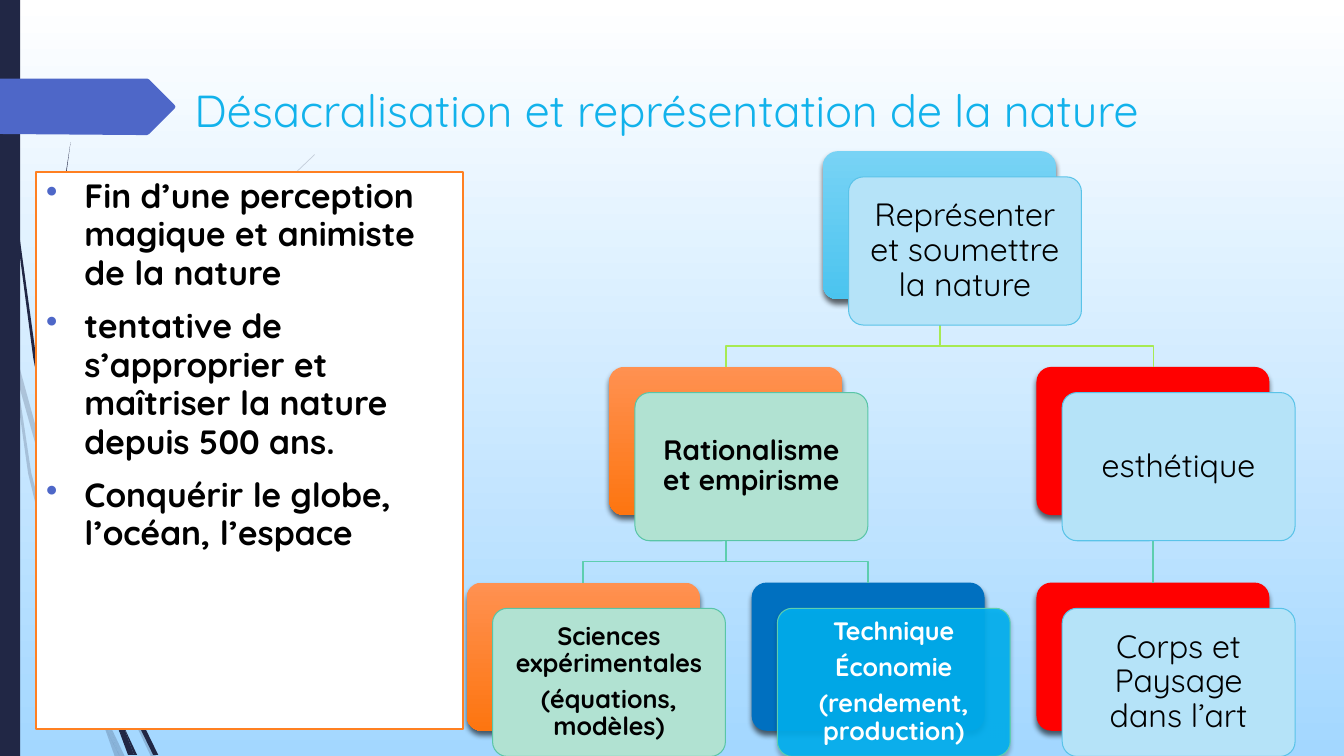
from lxml import etree
from pptx import Presentation
from pptx.dml.color import RGBColor
from pptx.enum.shapes import MSO_CONNECTOR, MSO_SHAPE
from pptx.enum.text import MSO_ANCHOR, PP_ALIGN
from pptx.oxml.ns import qn
from pptx.util import Pt

RECTANGLE, ROUNDED = MSO_SHAPE.RECTANGLE, MSO_SHAPE.ROUNDED_RECTANGLE
STRAIGHT = MSO_CONNECTOR.STRAIGHT
TOP, MIDDLE = MSO_ANCHOR.TOP, MSO_ANCHOR.MIDDLE
LEFT, CENTER = PP_ALIGN.LEFT, PP_ALIGN.CENTER

WHITE = RGBColor(0xFF, 0xFF, 0xFF)
BLACK = RGBColor(0x00, 0x00, 0x00)
SKY = RGBColor(0xA3, 0xD7, 0xFF)
NAVY = RGBColor(0x21, 0x27, 0x45)
INDIGO = RGBColor(0x4E, 0x67, 0xC8)
TITLE_BLUE = RGBColor(0x12, 0xB2, 0xEB)
BORDER_ORANGE = RGBColor(0xFF, 0x80, 0x21)
CYAN_LIGHT = RGBColor(0x78, 0xD3, 0xF5)
CYAN = RGBColor(0x4B, 0xC4, 0xEF)
ORANGE_LIGHT = RGBColor(0xFF, 0x91, 0x51)
ORANGE = RGBColor(0xFD, 0x75, 0x10)
RED = RGBColor(0xFF, 0x00, 0x00)
BLUE = RGBColor(0x00, 0x70, 0xC0)
BRIGHT_BLUE = RGBColor(0x00, 0xB0, 0xF0)
PALE_BLUE = RGBColor(0xB5, 0xE3, 0xF8)
PALE_BLUE_EDGE = RGBColor(0x5A, 0xC3, 0xE8)
MINT = RGBColor(0xB1, 0xE2, 0xD2)
MINT_EDGE = RGBColor(0x59, 0xC5, 0xA7)
LIME = RGBColor(0xA7, 0xEA, 0x52)
TEAL = RGBColor(0x5D, 0xCE, 0xAF)

COLUMNS, ROWS, CELL = 1333, 750, 9144
CARD_WIDTH, CARD_HEIGHT = 231, 147
CARD_SHIFT = 25.5
TREE_LEFT, TREE_TOP, COLUMN_STEP, LEVEL_STEP = 463, 150, 282.5, 214

PALE_STRANDS = [
    [(11, 350), (9, 322), (0, 282), (0, 299), (10, 344)],
    [(58, 522), (84, 599), (85, 586), (62, 520), (14, 345), (17, 376)],
    [(92, 607), (88, 596), (88, 610), (123, 694), (150, 751), (155, 751), (127, 692)],
    [(119, 751), (124, 751), (105, 711)],
    [(93, 683), (70, 619), (31, 469), (17, 376), (11, 350), (28, 470), (65, 621),
     (92, 693), (101, 714), (99, 707)],
    [(88, 584), (110, 462), (160, 349), (229, 245), (268, 198), (290, 175), (312, 154),
     (312, 153), (289, 175), (268, 197), (228, 244), (158, 348), (107, 461), (85, 584),
     (85, 586), (88, 596)],
    [(101, 714), (114, 751), (119, 751)],
    [(96, 692), (93, 683), (99, 707), (101, 714), (119, 751), (105, 711)],
]
DARK_STRANDS = [
    [(7, 110), (17, 233), (33, 355), (56, 477), (57, 481), (55, 457), (55, 453),
     (36, 355), (19, 232), (8, 109), (5, 48), (4, 0), (3, 0), (4, 48)],
    [(113, 649), (110, 641), (111, 656), (132, 708), (152, 749), (157, 749), (136, 706)],
    [(110, 691), (98, 657), (72, 556), (64, 505), (57, 477), (68, 557), (93, 659),
     (111, 708), (117, 722), (116, 717)],
    [(60, 472), (58, 453), (54, 349), (58, 245), (63, 193), (70, 141), (62, 193),
     (56, 245), (52, 349), (55, 449)],
    [(133, 749), (136, 749), (122, 719)],
    [(117, 722), (127, 749), (131, 749)],
    [(116, 706), (110, 691), (116, 717), (117, 722), (130, 749), (133, 749), (122, 719)],
]
BANNER = [(173, 108), (148, 133), (146, 134), (136, 134), (0, 133), (0, 78),
          (146, 78), (148, 79), (173, 104), (174, 106)]

POINTS = [
    "Fin d’une perception magique et animiste de la nature",
    "tentative de s’approprier et maîtriser la nature depuis 500 ans.",
    "Conquérir le globe, l’océan, l’espace",
]
ORANGES = (ORANGE_LIGHT, ORANGE)
CARDS = {
    "root": (1.25, 0, (CYAN_LIGHT, CYAN), PALE_BLUE, PALE_BLUE_EDGE, 23, BLACK,
             ["Représenter et soumettre la nature"]),
    "reason": (0.5, 1, ORANGES, MINT, MINT_EDGE, 20, BLACK, ["Rationalisme et empirisme"]),
    "science": (0, 2, ORANGES, MINT, MINT_EDGE, 18, BLACK,
                ["Sciences expérimentales", "(équations, modèles)"]),
    "technique": (1, 2, (BLUE,), BRIGHT_BLUE, TEAL, 18, WHITE,
                  ["Technique", "Économie", "(rendement, production)"]),
    "aesthetics": (2, 1, (RED,), PALE_BLUE, PALE_BLUE_EDGE, 23, BLACK, ["esthétique"]),
    "art": (2, 2, (RED,), PALE_BLUE, PALE_BLUE_EDGE, 23, BLACK, ["Corps et Paysage dans l’art"]),
}
LINKS = [("root", "reason", LIME), ("root", "aesthetics", LIME),
         ("reason", "science", TEAL), ("reason", "technique", TEAL)]


class NatureSlide:
    font = "Quicksand"

    def __init__(self, deck):
        self.page = deck.slides.add_slide(deck.slide_layouts[6])
        self.paint(self.page.background.fill, (WHITE, SKY))

    def paint(self, fill, colors):
        if len(colors) == 1:
            fill.solid()
            fill.fore_color.rgb = colors[0]
            return
        fill.gradient()
        fill.gradient_angle = 270
        for stop, color in zip(fill.gradient_stops, colors):
            stop.color.rgb = color

    def finish(self, shape, colors, edge=None, width=0.75):
        shape.shadow.inherit = False
        if colors:
            self.paint(shape.fill, colors)
        else:
            shape.fill.background()
        if edge is None:
            shape.line.fill.background()
        else:
            shape.line.color.rgb = edge
            shape.line.width = Pt(width)
        return shape

    def box(self, kind, column, row, columns, rows, colors, edge=None, width=0.75):
        lengths = [round(cells * CELL) for cells in (column, row, columns, rows)]
        return self.finish(self.page.shapes.add_shape(kind, *lengths), colors, edge, width)

    def outline(self, points, color):
        builder = self.page.shapes.build_freeform(*points[0], scale=CELL)
        builder.add_line_segments(points[1:], close=True)
        return self.finish(builder.convert_to_shape(), (color,))

    def link(self, points, color):
        builder = self.page.shapes.build_freeform(*points[0], scale=CELL)
        builder.add_line_segments(points[1:], close=False)
        self.finish(builder.convert_to_shape(), None, color, 1.25)

    def join(self, upper, lower, color):
        line = self.page.shapes.add_connector(STRAIGHT, 0, 0, 0, 0)
        line.begin_connect(upper, 2)
        line.end_connect(lower, 0)
        line.line.color.rgb = color
        line.line.width = Pt(1.25)
        etree.SubElement(line._element.spPr, qn("a:effectLst"))

    def fade(self, shape, percent):
        color = shape._element.spPr.find(qn("a:solidFill"))[0]
        etree.SubElement(color, qn("a:alpha"), val=str(percent * 1000))

    def shade(self, shape, percent, blur, distance):
        effects = shape._element.spPr.find(qn("a:effectLst"))
        shadow = etree.SubElement(effects, qn("a:outerShdw"), blurRad=str(Pt(blur)),
                                  dist=str(Pt(distance)), dir="5400000", rotWithShape="0")
        color = etree.SubElement(shadow, qn("a:srgbClr"), val=str(BLACK))
        etree.SubElement(color, qn("a:alpha"), val=str(percent * 1000))

    def add_text(self, shape, lines, size, color, bold=False, align=LEFT, anchor=TOP,
                 spacing=1.0, before=0, after=0):
        frame = shape.text_frame
        frame.word_wrap = True
        frame.vertical_anchor = anchor
        for index, line in enumerate(lines):
            para = frame.add_paragraph() if index else frame.paragraphs[0]
            para.alignment = align
            para.line_spacing = spacing
            para.space_before, para.space_after = Pt(before), Pt(after)
            span = para.add_run()
            span.text = line
            span.font.name, span.font.size, span.font.bold = self.font, Pt(size), bold
            span.font.color.rgb = color
        return frame

    def title(self, text):
        lengths = [cells * CELL for cells in (183, 77, 1075, 73)]
        self.add_text(self.page.shapes.add_textbox(*lengths), [text], 32, TITLE_BLUE)

    def bullets(self, lines):
        box = self.box(RECTANGLE, 36, 171, 423, 552, (WHITE,), BORDER_ORANGE, 1.25)
        frame = self.add_text(box, lines, 24, BLACK, True, spacing=0.96, before=10)
        for para in frame.paragraphs:
            style = para._p.get_or_add_pPr()
            style.set("marL", str(38 * CELL))
            style.set("indent", str(-38 * CELL))
            tint = etree.SubElement(style, qn("a:buClr"))
            etree.SubElement(tint, qn("a:srgbClr"), val=str(INDIGO))
            etree.SubElement(style, qn("a:buChar"), char="•")

    def card(self, step, level, colors, edge=None, shift=0):
        box = self.box(ROUNDED, TREE_LEFT + step * COLUMN_STEP + shift,
                       TREE_TOP + level * LEVEL_STEP + shift,
                       CARD_WIDTH, CARD_HEIGHT, colors, edge)
        box.adjustments[0] = 0.1
        return box

    def tree(self):
        backs, fronts = {}, {}
        for name, (step, level, colors, *_) in CARDS.items():
            backs[name] = self.card(step, level, colors)
            self.shade(backs[name], 60, 4, 3)
        for parent, child, color in LINKS:
            start, end = [TREE_LEFT + CARDS[name][0] * COLUMN_STEP + CARD_WIDTH / 2
                          for name in (parent, child)]
            top = TREE_TOP + CARDS[parent][1] * LEVEL_STEP + CARD_HEIGHT
            self.link([(start, top), (start, top + 46), (end, top + 46), (end, top + 67)], color)
        self.join(backs["aesthetics"], backs["art"], TEAL)
        for name, (step, level, _, fill, edge, size, ink, lines) in CARDS.items():
            front = self.card(step, level, (fill,), edge, CARD_SHIFT)
            frame = self.add_text(front, lines, size, ink, size < 23, CENTER, MIDDLE,
                                  spacing=0.9, after=round(0.35 * size, 2))
            inset = round((4 + size * 0.4) * CELL)
            frame.margin_left = frame.margin_right = inset
            frame.margin_top = frame.margin_bottom = inset
            fronts[name] = front
        self.fade(fronts["technique"], 90)
        self.shade(fronts["technique"], 25, 3, 2)


def main():
    deck = Presentation()
    deck.slide_width, deck.slide_height = COLUMNS * CELL, ROWS * CELL
    slide = NatureSlide(deck)
    for points in PALE_STRANDS:
        slide.fade(slide.outline(points, NAVY), 20)
    for points in DARK_STRANDS:
        slide.outline(points, NAVY)
    slide.box(RECTANGLE, 0, 0, 20, ROWS, (NAVY,))
    slide.outline(BANNER, INDIGO)
    slide.title("Désacralisation et représentation de la nature")
    slide.tree()
    slide.bullets(POINTS)
    deck.save("out.pptx")


if __name__ == "__main__":
    main()
